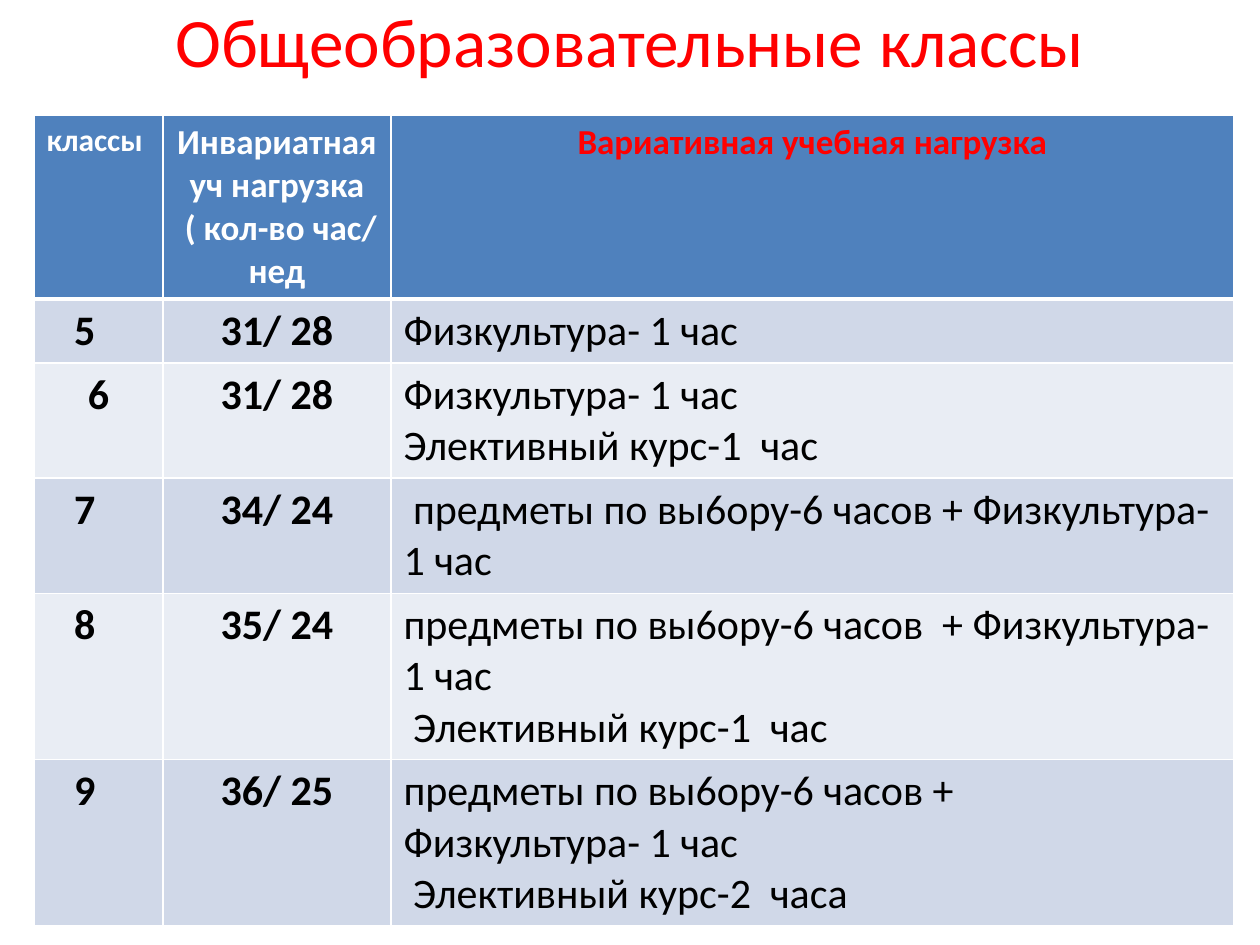
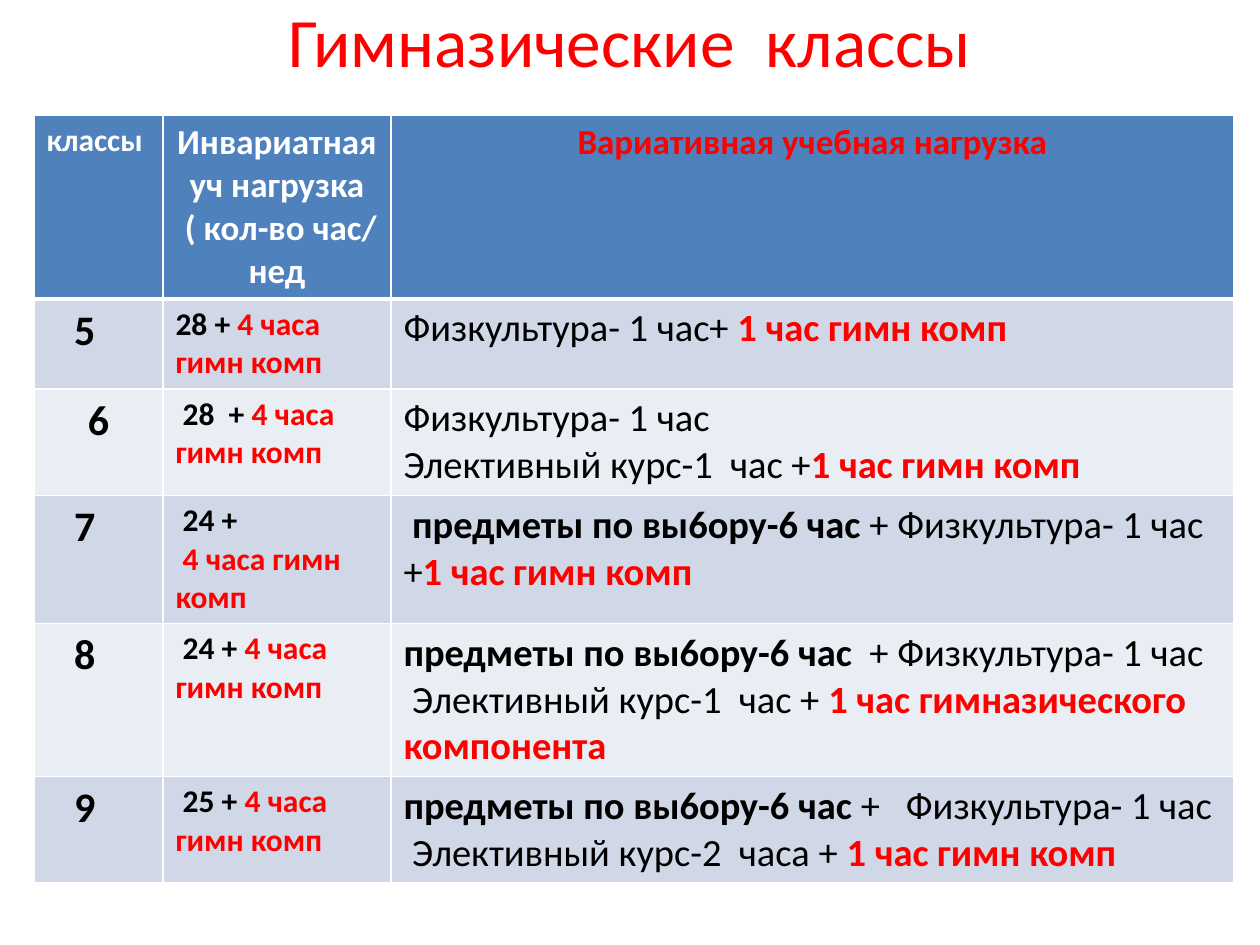
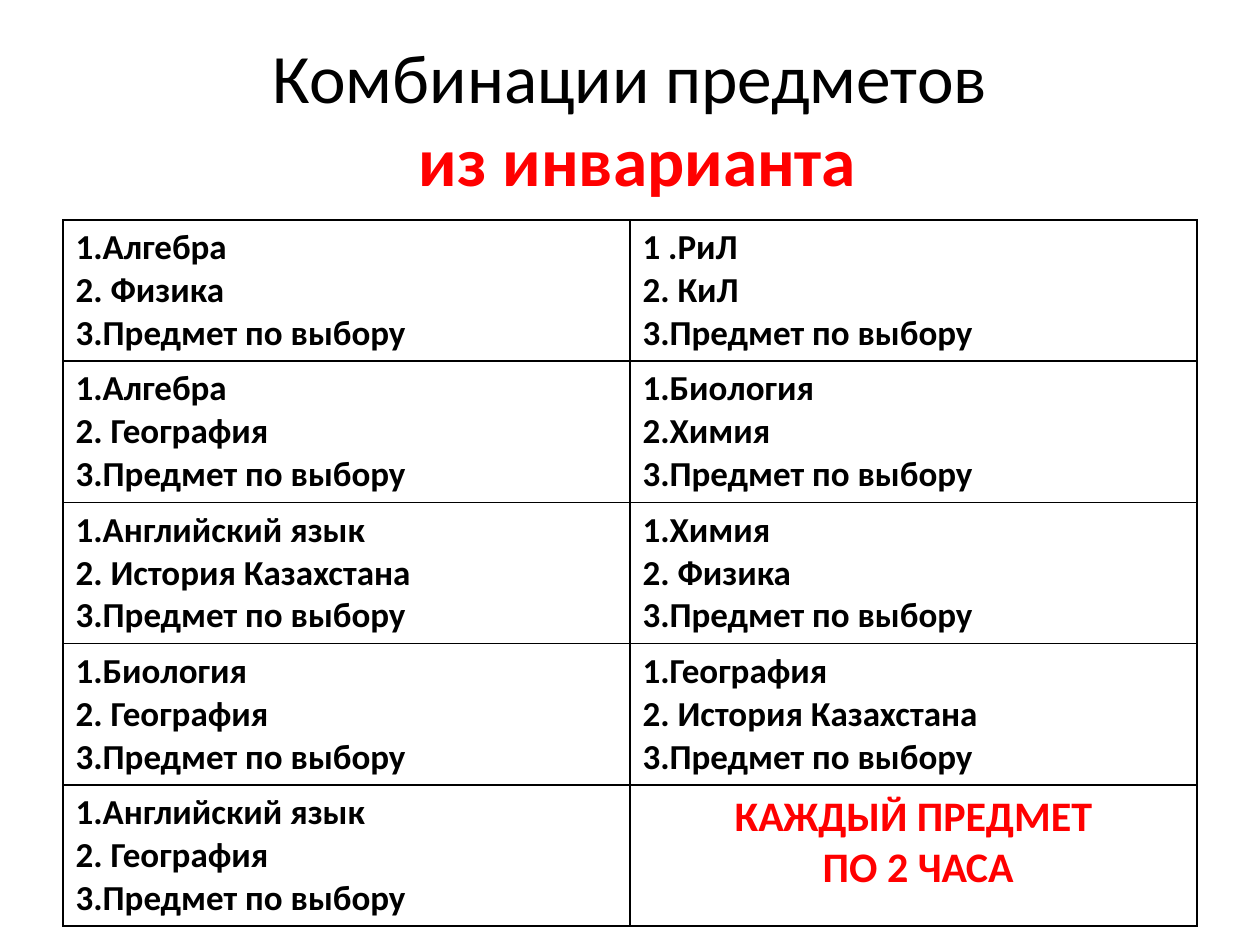
from lxml import etree
from pptx import Presentation
from pptx.dml.color import RGBColor
from pptx.enum.text import MSO_ANCHOR, MSO_AUTO_SIZE, PP_ALIGN
from pptx.oxml.ns import qn
from pptx.util import Pt

PX = 7257  # EMU in one px, 126 px to the inch
LEFT, CENTER = PP_ALIGN.LEFT, PP_ALIGN.CENTER
MIDDLE = MSO_ANCHOR.MIDDLE
NO_AUTOFIT = MSO_AUTO_SIZE.NONE

FONT = "Calibri"
RED = RGBColor(0xFF, 0x00, 0x00)
BLACK = RGBColor(0x00, 0x00, 0x00)
WHITE = RGBColor(0xFF, 0xFF, 0xFF)
HEADER_BLUE = RGBColor(0x4F, 0x81, 0xBD)
BANDS = [RGBColor(0xD0, 0xD8, 0xE8), RGBColor(0xE9, 0xED, 0xF4)]

BOLD = {"bold": True}
ACCENT = {"bold": True, "color": RED}


def write_text(text_frame, lines, size, color=BLACK, bold=False, align=LEFT):
    """Each line is a string or a list of (text, format) runs."""
    for index, line in enumerate(lines):
        paragraph = text_frame.paragraphs[0] if index == 0 else text_frame.add_paragraph()
        paragraph.alignment = align
        for text, changes in [(line, {})] if isinstance(line, str) else line:
            run = paragraph.add_run()
            run.text = text
            run.font.name = FONT
            run.font.size = Pt(size)
            run.font.bold = changes.get("bold", bold)
            run.font.color.rgb = changes.get("color", color)


def outline_cell(cell, color, top=1, bottom=1):
    """Draw the four borders; they must stand before the fill."""
    properties = cell._tc.get_or_add_tcPr()
    borders = [("a:lnL", 1), ("a:lnR", 1), ("a:lnT", top), ("a:lnB", bottom)]
    for position, (tag, width) in enumerate(borders):
        line = etree.Element(qn(tag), w=str(Pt(width)))
        fill = etree.SubElement(line, qn("a:solidFill"))
        etree.SubElement(fill, qn("a:srgbClr"), val=str(color))
        properties.insert(position, line)


# Content of the two study load slides
GRADES = ["5", "6", "7", "8", "9"]
HEADERS = [
    (["классы"], 18, WHITE, LEFT),
    (["Инвариатная уч нагрузка", " ( кол-во час/ нед"], 20, WHITE, CENTER),
    (["Вариативная учебная нагрузка"], 20, RED, CENTER),
]
GYMNASIUM_HOURS = ("4 часа гимн комп", ACCENT)
GYMNASIUM_HOUR = ("1 час гимн комп", ACCENT)

load_slides = [
    {
        "title": "Общеобразовательные классы",
        "row_heights": [183, 64, 115, 115, 166, 166],
        "core_format": {"size": 24, "bold": True, "align": CENTER},
        "core": [["31/ 28"], ["31/ 28"], ["34/ 24"], ["35/ 24"], ["36/ 25"]],
        "elective_size": 24,
        "elective": [
            ["Физкультура- 1 час"],
            ["Физкультура- 1 час", "Элективный курс-1  час"],
            [" предметы по вы6ору-6 часов + Физкультура- 1 час"],
            ["предметы по вы6ору-6 часов  + Физкультура- 1 час", " Элективный курс-1  час"],
            ["предметы по вы6ору-6 часов +", "Физкультура- 1 час", " Элективный курс-2  часа"],
        ],
    },
    {
        "title": "Гимназические  классы",
        "row_heights": [183, 90, 106, 128, 153, 106],
        "core_format": {"size": 18, "bold": True},
        "core": [
            [[("28 + ", BOLD), GYMNASIUM_HOURS]],
            [[(" 28  + ", BOLD), GYMNASIUM_HOURS]],
            [" 24 +", [(" ", BOLD), GYMNASIUM_HOURS]],
            [[(" 24 + ", BOLD), GYMNASIUM_HOURS]],
            [[(" 25 + ", BOLD), GYMNASIUM_HOURS]],
        ],
        "elective_size": 22,
        "elective": [
            [[("Физкультура- 1 час+ ", {}), GYMNASIUM_HOUR]],
            ["Физкультура- 1 час", [("Элективный курс-1  час +", {}), GYMNASIUM_HOUR]],
            [[(" ", {}), ("предметы по вы6ору-6 час ", BOLD),
              ("+ Физкультура- 1 час +", {}), GYMNASIUM_HOUR]],
            [[("предметы по вы6ору-6 час  ", BOLD), ("+ Физкультура- 1 час", {})],
             [(" Элективный курс-1  час + ", {}), ("1 час гимназического компонента", ACCENT)]],
            [[("предметы по вы6ору-6 час ", BOLD), ("+   Физкультура- 1 час", {})],
             [(" Элективный курс-2  часа + ", {}), GYMNASIUM_HOUR]],
        ],
    },
]

# Content of the subject combinations slide
CHOICE = "3.Предмет по выбору"
combinations = [
    [["1.Алгебра", "2. Физика", CHOICE], ["1 .РиЛ", "2. КиЛ", CHOICE]],
    [["1.Алгебра", "2. География", CHOICE], ["1.Биология", "2.Химия", CHOICE]],
    [["1.Английский язык", "2. История Казахстана", CHOICE], ["1.Химия", "2. Физика", CHOICE]],
    [["1.Биология", "2. География", CHOICE], ["1.География", "2. История Казахстана", CHOICE]],
    [["1.Английский язык", "2. География", CHOICE], ["КАЖДЫЙ ПРЕДМЕТ", " ПО 2 ЧАСА"]],
]

# One entry per slide: title, its box, and the table's place and grid
layouts = [
    {"lines": [[(load["title"], {"color": RED})]], "title_top": 0, "title_height": 80,
     "left": 34, "top": 115, "columns": [129, 228, 843], "rows": load["row_heights"]}
    for load in load_slides
]
layouts.append(
    {"lines": ["Комбинации предметов", [(" из инварианта", ACCENT)]],
     "title_top": 38, "title_height": 158,
     "left": 63, "top": 220, "columns": [567] * 2, "rows": [141] * 5}
)

presentation = Presentation()
presentation.slide_width = 1260 * PX
presentation.slide_height = 945 * PX

# Titles and empty tables
tables = []
for layout in layouts:
    slide = presentation.slides.add_slide(presentation.slide_layouts[5])
    title = slide.shapes.title
    title.left, title.top = 63 * PX, layout["title_top"] * PX
    title.width, title.height = 1134 * PX, layout["title_height"] * PX
    title.text_frame.auto_size = NO_AUTOFIT
    title.text_frame.vertical_anchor = MIDDLE
    write_text(title.text_frame, layout["lines"], 39.6, align=CENTER)

    columns, rows = layout["columns"], layout["rows"]
    table = slide.shapes.add_table(
        len(rows), len(columns), layout["left"] * PX, layout["top"] * PX,
        sum(columns) * PX, sum(rows) * PX).table
    table.first_row = table.horz_banding = False
    for column, width in zip(table.columns, columns):
        column.width = width * PX
    for row, height in zip(table.rows, rows):
        row.height = height * PX
    tables.append(table)

# Study load tables
for table, load in zip(tables, load_slides):
    for column, (lines, size, color, align) in enumerate(HEADERS):
        write_text(table.cell(0, column).text_frame, lines, size, color, True, align)
    for row, grade in enumerate(GRADES, start=1):
        grade_cell = table.cell(row, 0)
        if grade != "6":
            grade_cell.margin_right = 40 * PX  # these grades sit left of centre
        write_text(grade_cell.text_frame, [grade], 24, bold=True, align=CENTER)
        write_text(table.cell(row, 1).text_frame, load["core"][row - 1], **load["core_format"])
        write_text(table.cell(row, 2).text_frame, load["elective"][row - 1], load["elective_size"])
    for row in range(len(table.rows)):
        for cell in table.rows[row].cells:
            cell.fill.solid()
            cell.fill.fore_color.rgb = BANDS[(row - 1) % 2] if row else HEADER_BLUE
            outline_cell(cell, WHITE, top=3 if row == 1 else 1, bottom=1 if row else 3)

# Subject combinations table
for row, pair in enumerate(combinations):
    for column, lines in enumerate(pair):
        cell = tables[-1].cell(row, column)
        if lines[-1] == CHOICE:
            write_text(cell.text_frame, lines, 20, bold=True)
        else:
            write_text(cell.text_frame, lines, 24, RED, True, CENTER)
        cell.fill.background()
        outline_cell(cell, BLACK)

presentation.save("out.pptx")
